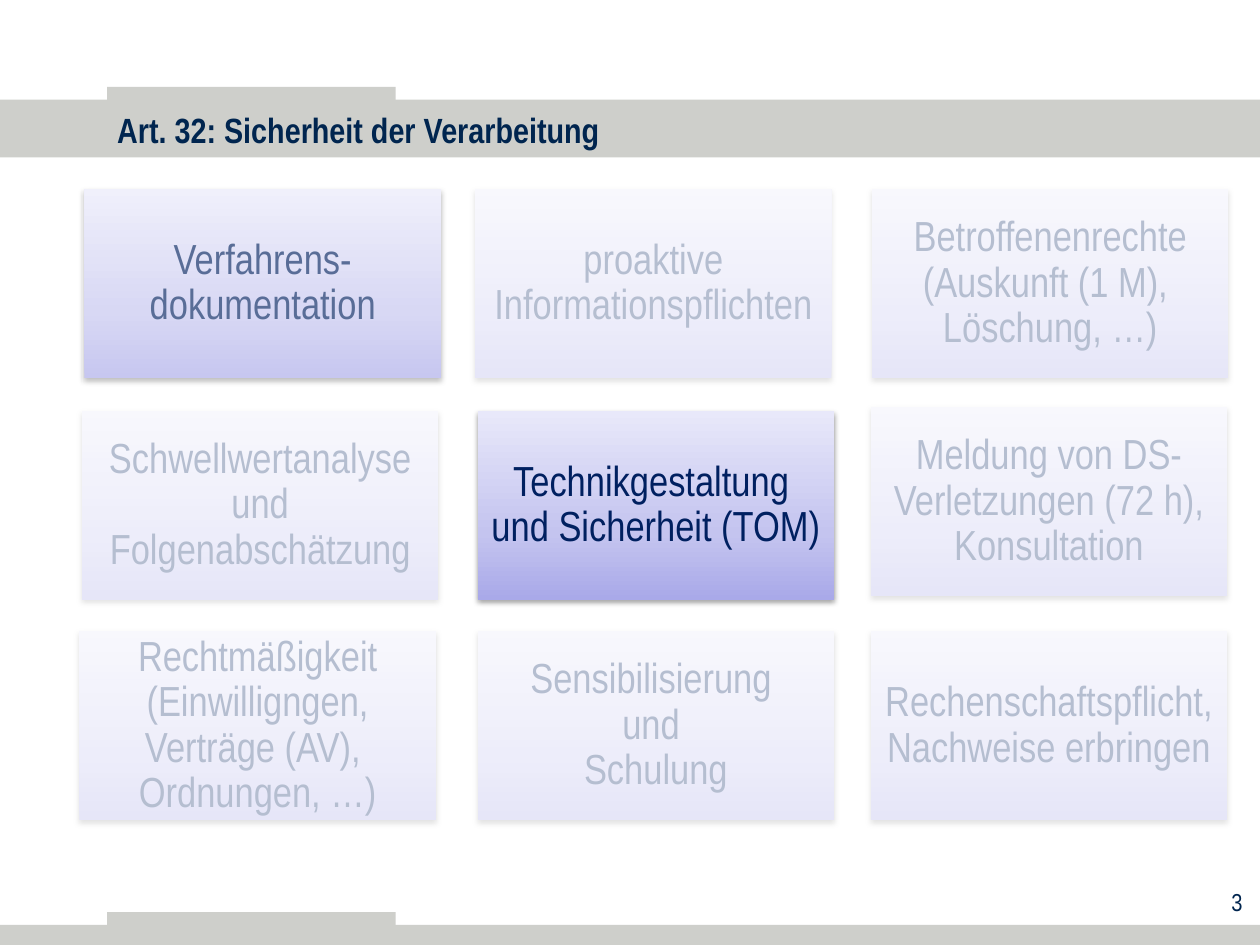
from lxml import etree
from pptx import Presentation
from pptx.dml.color import RGBColor
from pptx.enum.shapes import MSO_SHAPE
from pptx.enum.text import MSO_ANCHOR, MSO_AUTO_SIZE, PP_ALIGN
from pptx.oxml.ns import qn
from pptx.util import Inches, Pt

RECTANGLE = MSO_SHAPE.RECTANGLE
MIDDLE = MSO_ANCHOR.MIDDLE
NO_AUTOFIT = MSO_AUTO_SIZE.NONE
LEFT, CENTER, RIGHT = PP_ALIGN.LEFT, PP_ALIGN.CENTER, PP_ALIGN.RIGHT

FONT = "Arial Narrow"
COLORS = {
    "band": "CECFCB",
    "title": "00254F",
    "card_text": "002060",
    "card_bottom": "A9A9E9",
    "card_middle": "C4C4EF",
    "card_top": "E8E8FA",
    "veil": "FFFFFF",
    "shadow": "000000",
}
CARD_GRADIENT = [(0, "card_bottom"), (35, "card_middle"), (100, "card_top")]
CARD_WIDTH, CARD_HEIGHT = 2.83, 1.5

# Bands: left, top, width, height
BANDS = [
    (0, 0.79, 10, 0.46),
    (0, 7.34, 10, 0.16),
    (0.85, 0.69, 2.29, 0.13),
    (0.85, 7.24, 2.29, 0.13),
]
# Cards: left, top, text
CARDS = [
    (0.67, 1.5, "Verfahrens-dokumentation"),
    (3.77, 1.5, "proaktive Informationspflichten"),
    (6.92, 1.5, "Betroffenenrechte (Auskunft (1 M), \vLöschung, …)"),
    (0.65, 3.26, "Schwellwertanalyse und Folgenabschätzung"),
    (3.79, 3.26, "Technikgestaltung \vund Sicherheit (TOM)"),
    (6.91, 3.23, "Meldung von DS-Verletzungen (72 h), Konsultation"),
    (0.63, 5.01, "Rechtmäßigkeit (Einwilligngen, Verträge (AV), \vOrdnungen, …)"),
    (3.79, 5.01, "Sensibilisierung \vund \vSchulung"),
    (6.91, 5.01, "Rechenschaftspflicht, Nachweise erbringen"),
]
# Veils that dim the cards: left, top, width, height, opacity in percent
VEILS = [
    (3.62, 1.3, 6.38, 1.84, 71),
    (3.62, 4.93, 6.38, 1.76, 71),
    (0.34, 3.14, 3.29, 3.68, 71),
    (6.83, 3.14, 2.97, 1.76, 71),
    (0.65, 1.41, 2.97, 1.77, 35),
]


class SlideBuilder:
    def __init__(self, slide):
        self.slide = slide

    def rectangle(self, left, top, width, height, color, opacity=100):
        shape = self.slide.shapes.add_shape(
            RECTANGLE, Inches(left), Inches(top), Inches(width), Inches(height))
        shape.shadow.inherit = False
        shape.line.fill.background()
        shape.fill.solid()
        shape.fill.fore_color.rgb = RGBColor.from_string(COLORS[color])
        if opacity < 100:
            color_element = shape._element.spPr.find(qn("a:solidFill"))[0]
            etree.SubElement(color_element, qn("a:alpha"), val=str(opacity * 1000))
        return shape

    def set_text(self, shape, text, size, color, alignment, bold=False):
        shape.text_frame.text = text
        paragraph = shape.text_frame.paragraphs[0]
        paragraph.alignment = alignment
        paragraph.font.name = FONT
        paragraph.font.size = Pt(size)
        paragraph.font.bold = bold
        paragraph.font.color.rgb = RGBColor.from_string(COLORS[color])
        return paragraph

    def title(self, text, left, top, width, height):
        title = self.slide.shapes.title
        title.left, title.top = Inches(left), Inches(top)
        title.width, title.height = Inches(width), Inches(height)
        title.text_frame.auto_size = NO_AUTOFIT
        title.text_frame.vertical_anchor = MIDDLE
        self.set_text(title, text, 20, "title", LEFT, bold=True)
        # Bring the title in front of the bands
        self.slide.shapes._spTree.append(title._element)

    def label(self, text, left, top, width, height):
        box = self.slide.shapes.add_textbox(
            Inches(left), Inches(top), Inches(width), Inches(height))
        box.text_frame.word_wrap = True
        self.set_text(box, text, 14, "title", RIGHT)

    def card(self, left, top, text):
        shape = self.rectangle(left, top, CARD_WIDTH, CARD_HEIGHT, "card_middle")
        self.add_gradient(shape)
        self.add_shadow(shape)
        frame = shape.text_frame
        frame.word_wrap = True
        frame.vertical_anchor = MIDDLE
        frame.margin_left = frame.margin_right = Inches(0.1)
        frame.margin_top = frame.margin_bottom = Inches(0.1)
        paragraph = self.set_text(shape, text, 24, "card_text", CENTER)
        paragraph.line_spacing = 0.9

    def add_gradient(self, shape):
        properties = shape._element.spPr
        gradient = etree.Element(qn("a:gradFill"), rotWithShape="1")
        stops = etree.SubElement(gradient, qn("a:gsLst"))
        for position, color in CARD_GRADIENT:
            stop = etree.SubElement(stops, qn("a:gs"), pos=str(position * 1000))
            etree.SubElement(stop, qn("a:srgbClr"), val=COLORS[color])
        etree.SubElement(gradient, qn("a:lin"), ang=str(270 * 60000), scaled="0")
        properties.replace(properties.find(qn("a:solidFill")), gradient)

    def add_shadow(self, shape):
        effects = shape._element.spPr.find(qn("a:effectLst"))
        shadow = etree.SubElement(
            effects, qn("a:outerShdw"), blurRad=str(Pt(3.1)), dist=str(Pt(1.6)),
            dir=str(90 * 60000), rotWithShape="0")
        color = etree.SubElement(shadow, qn("a:srgbClr"), val=COLORS["shadow"])
        etree.SubElement(color, qn("a:alpha"), val="38000")


def main():
    presentation = Presentation()
    presentation.slide_width = Inches(10)
    presentation.slide_height = Inches(7.5)
    title_only = presentation.slide_layouts[5]
    builder = SlideBuilder(presentation.slides.add_slide(title_only))

    # Bands, title and page number
    for band in BANDS:
        builder.rectangle(*band, "band")
    builder.title("Art. 32: Sicherheit der Verarbeitung", 0.83, 0.82, 8.7, 0.42)
    builder.label("3", 7.74, 6.99, 2.22, 0.43)

    # Cards, then the veils over all but the centre one
    for card in CARDS:
        builder.card(*card)
    for left, top, width, height, opacity in VEILS:
        builder.rectangle(left, top, width, height, "veil", opacity)

    presentation.save("out.pptx")


if __name__ == "__main__":
    main()
